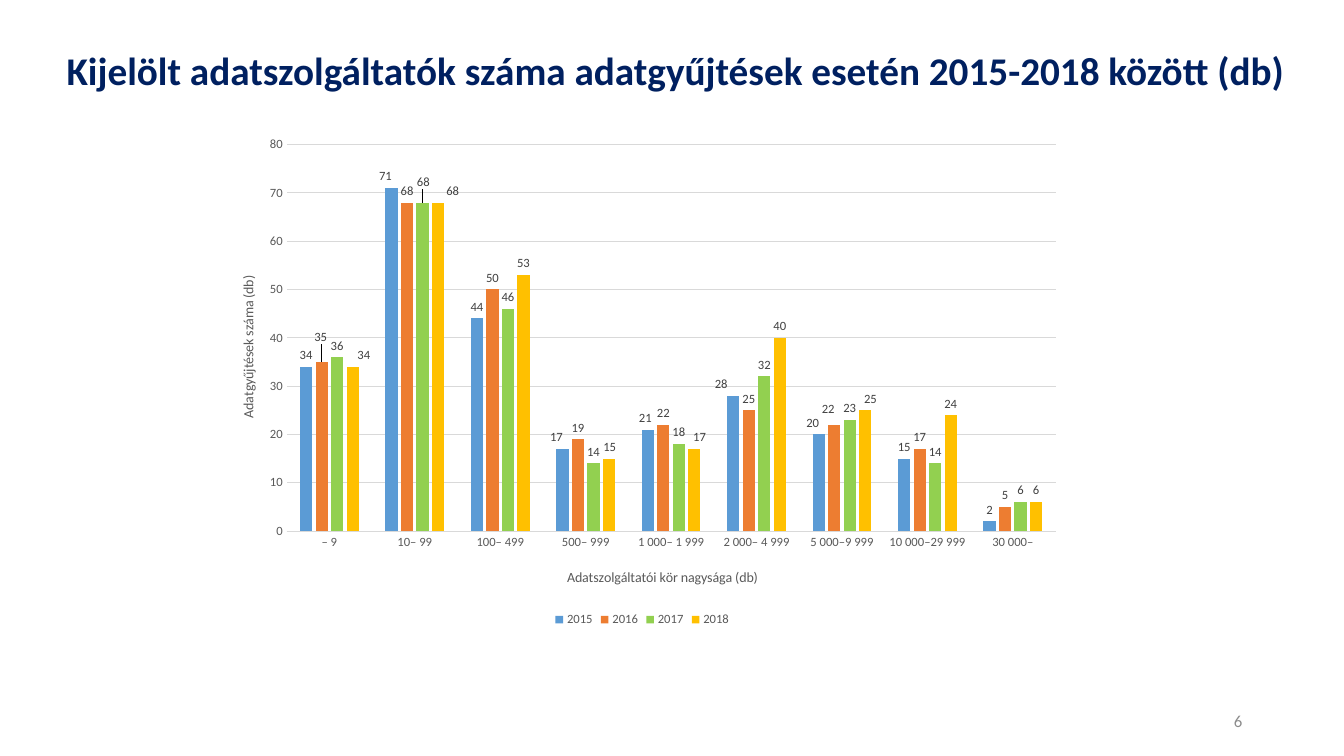
from lxml import etree
from pptx import Presentation
from pptx.chart.data import CategoryChartData
from pptx.dml.color import RGBColor
from pptx.enum.chart import (XL_CHART_TYPE, XL_LABEL_POSITION,
                             XL_LEGEND_POSITION, XL_TICK_MARK)
from pptx.enum.text import MSO_ANCHOR, PP_ALIGN
from pptx.oxml.ns import qn
from pptx.util import Inches, Pt

NAVY = RGBColor(0x00, 0x20, 0x60)
PAGE_GREY = RGBColor(0x8C, 0x8C, 0x8C)
AXIS_GREY = RGBColor(0x59, 0x59, 0x59)
LABEL_GREY = RGBColor(0x40, 0x40, 0x40)
GRID_GREY = RGBColor(0xD9, 0xD9, 0xD9)
BLUE = RGBColor(0x5B, 0x9B, 0xD5)
ORANGE = RGBColor(0xED, 0x7D, 0x31)
GREEN = RGBColor(0x92, 0xD0, 0x50)
GOLD = RGBColor(0xFF, 0xC0, 0x00)

GROUPS = ["– 9", "10– 99", "100– 499", "500– 999", "1 000– 1 999",
          "2 000– 4 999", "5 000–9 999", "10 000–29 999", "30 000–"]
# year, counts, bar colour, label shifts as {group index: (x, y)} in chart fractions
YEARS = [
    ("2015", [34, 71, 44, 17, 21, 28, 20, 15, 2], BLUE,
     {1: (-0.007, 0), 3: (-0.007, 0), 4: (-0.003, 0), 5: (-0.014, 0), 6: (-0.007, 0)}),
    ("2016", [35, 68, 50, 19, 22, 25, 22, 17, 5], ORANGE,
     {0: (-0.001, -0.026), 6: (-0.007, -0.008)}),
    ("2017", [36, 68, 46, 14, 18, 32, 23, 14, 6], GREEN, {1: (0.001, -0.018)}),
    ("2018", [34, 68, 53, 15, 17, 40, 25, 24, 6], GOLD,
     {0: (0.013, 0), 1: (0.017, 0), 3: (0.001, 0), 4: (0.006, 0), 6: (0.006, 0)}),
]


def style_font(font, size, color, bold=False):
    font.name = "Calibri"
    font.size = Pt(size)
    font.bold = bold
    font.color.rgb = color


def add_text(slide, box, text, size, color, align, bold=False):
    frame = slide.shapes.add_textbox(*map(Inches, box)).text_frame
    frame.word_wrap = True
    frame.vertical_anchor = MSO_ANCHOR.MIDDLE
    paragraph = frame.paragraphs[0]
    paragraph.text = text
    paragraph.alignment = align
    style_font(paragraph.font, size, color, bold)
    return paragraph


def set_layout(element, index, **settings):
    """Give a chart element a manual layout as its child number index."""
    for old in element.findall(qn("c:layout")):
        element.remove(old)
    layout = etree.Element(qn("c:layout"))
    manual = etree.SubElement(layout, qn("c:manualLayout"))
    for name, value in settings.items():
        etree.SubElement(manual, qn(f"c:{name}")).set("val", str(value))
    element.insert(index, layout)


def style_axis(axis, title, x, y):
    axis.major_tick_mark = axis.minor_tick_mark = XL_TICK_MARK.NONE
    style_font(axis.tick_labels.font, 9, AXIS_GREY)
    frame = axis.axis_title.text_frame
    frame.text = title
    style_font(frame.paragraphs[0].font, 10, AXIS_GREY)
    set_layout(axis.axis_title._element, 1, xMode="edge", yMode="edge", x=x, y=y)
    return frame


def style_series(series, color, shifts):
    series.format.fill.solid()
    series.format.fill.fore_color.rgb = color
    series.invert_if_negative = False
    labels = series.data_labels
    labels.show_value = True
    labels.position = XL_LABEL_POSITION.OUTSIDE_END
    style_font(labels.font, 9, LABEL_GREY)
    for group in shifts:
        label = series.points[group].data_label
        label.position = XL_LABEL_POSITION.OUTSIDE_END
        style_font(label.font, 9, LABEL_GREY)
    for element in labels._element.findall(qn("c:dLbl")):
        x, y = shifts[int(element.find(qn("c:idx")).get("val"))]
        set_layout(element, 1, x=x, y=y)


def add_count_chart(slide, box):
    data = CategoryChartData()
    data.categories = GROUPS
    for year, counts, _, _ in YEARS:
        data.add_series(year, counts)
    chart = slide.shapes.add_chart(
        XL_CHART_TYPE.COLUMN_CLUSTERED, *map(Inches, box), data).chart
    style_font(chart.font, 10, AXIS_GREY)
    chart.has_title = False

    # Columns and their labels
    plot = chart.plots[0]
    plot.gap_width, plot.overlap = 219, -27
    plot.vary_by_categories = False
    for series, (_, _, color, shifts) in zip(plot.series, YEARS):
        style_series(series, color, shifts)

    # Axes and gridlines
    style_axis(chart.category_axis, "Adatszolgáltatói kör nagysága (db)", 0.41, 0.87)
    counts_title = style_axis(chart.value_axis, "Adatgyűjtések száma (db)", 0.03, 0.29)
    counts_title._txBody.bodyPr.set("rot", "-5400000")
    counts_title._txBody.bodyPr.set("vert", "horz")
    chart.value_axis.minimum_scale = 0
    chart.value_axis.maximum_scale = 80
    chart.value_axis.major_unit = 10
    chart.value_axis.format.line.fill.background()
    for line in (chart.category_axis.format.line,
                 chart.value_axis.major_gridlines.format.line):
        line.color.rgb = GRID_GREY
        line.width = Pt(0.75)

    # Plot area and legend
    plot_area = chart._chartSpace.find(".//" + qn("c:plotArea"))
    set_layout(plot_area, 0, layoutTarget="inner", xMode="edge", yMode="edge",
               x=0.088, y=0.035, w=0.891, h=0.767)
    chart.has_legend = True
    chart.legend.position = XL_LEGEND_POSITION.BOTTOM
    chart.legend.include_in_layout = False
    style_font(chart.legend.font, 9, AXIS_GREY)


def main():
    deck = Presentation()
    deck.slide_width, deck.slide_height = Inches(13.33), Inches(7.5)
    slide = deck.slides.add_slide(deck.slide_layouts[6])

    # Heading
    heading = add_text(
        slide, (0.56, 0.29, 12.27, 0.86),
        "Kijelölt adatszolgáltatók száma adatgyűjtések esetén 2015-2018 között (db)",
        28, NAVY, PP_ALIGN.CENTER, bold=True)
    heading.line_spacing = 0.9

    add_count_chart(slide, (2.09, 1.26, 8.56, 5))

    # Page number
    add_text(slide, (9.42, 6.95, 3, 0.4), "6", 12, PAGE_GREY, PP_ALIGN.RIGHT)
    deck.save("out.pptx")


if __name__ == "__main__":
    main()
